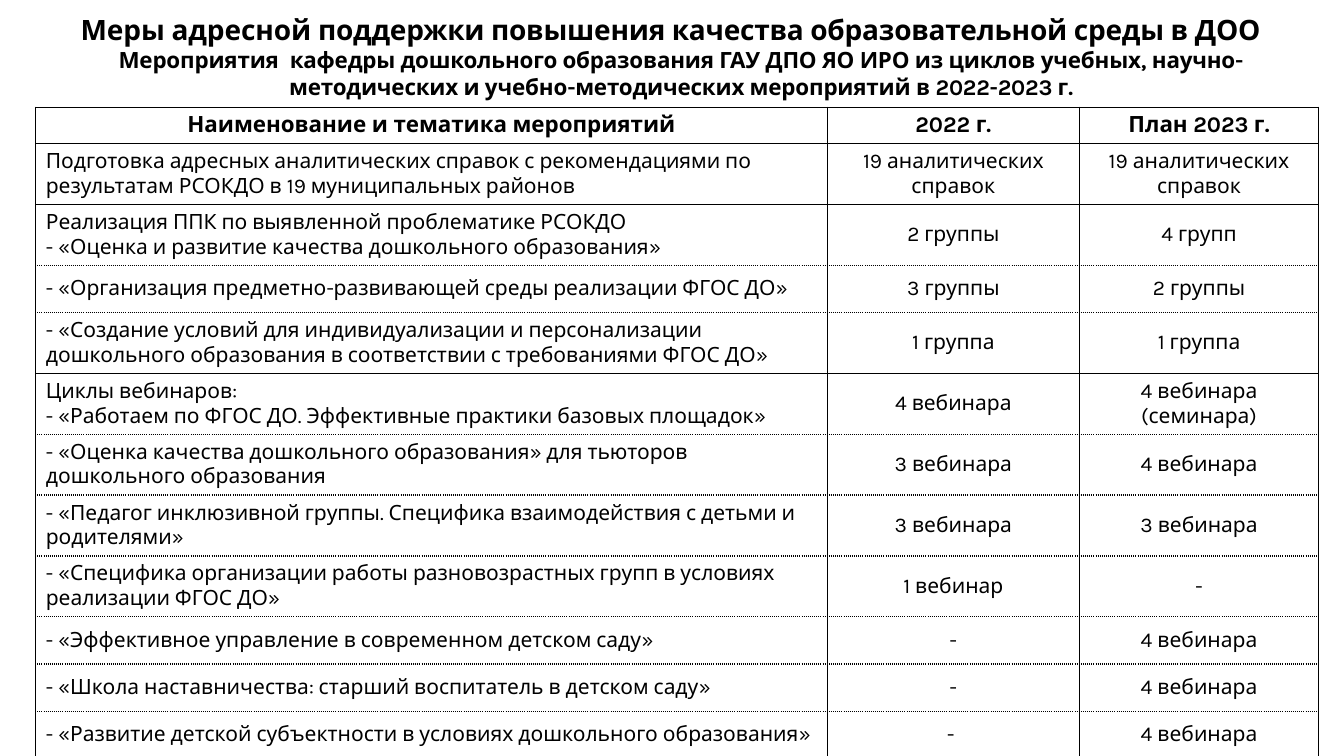
import pptx
import pptx.util
import pptx.dml.color
import pptx.enum.text
import pptx.oxml
from lxml import etree

PX = 9525  # EMU in one px, 96 px to the inch
BLACK = "000000"
FONT = "Karla"
CENTER = pptx.enum.text.PP_ALIGN.CENTER
LEFT = pptx.enum.text.PP_ALIGN.LEFT
A = "http://schemas.openxmlformats.org/drawingml/2006/main"


def rgb(value):
    return pptx.dml.color.RGBColor.from_string(value)


def add_run(p, text, size, bold, spacing=0):
    r = p.add_run()
    r.text = text
    values = {"name": FONT, "size": pptx.util.Pt(size), "bold": bold}
    for name, value in values.items():
        setattr(r.font, name, value)
    r.font.color.rgb = rgb(BLACK)
    if spacing:
        r.font._element.set("spc", str(spacing))


prs = pptx.Presentation()
prs.slide_width, prs.slide_height = 1280 * PX, 720 * PX
s = prs.slides.add_slide(prs.slide_layouts[5])

# Title and subtitle
title = s.shapes.title
subtitle = s.shapes.add_textbox(0, 0, PX, PX)
headings = [
    (title, (8, 0, 1261, 40), 4, 20, 3.1, 30.2,
     [("Меры адресной ", -10),
      ("поддержки повышения качества образовательной среды в ДОО", -20)]),
    (subtitle, (57, 32, 1184, 64), 12, 16, 9.2, None,
     [("Мероприятия  кафедры дошкольного образования ГАУ ДПО ЯО ИРО из циклов "
       "учебных, научно-методических и учебно-методических мероприятий "
       "в 2022-2023 г.", -10)]),
]
for sp, box, top, size, before, line, runs in headings:
    for name, value in zip(("left", "top", "width", "height"), box):
        setattr(sp, name, value * PX)
    tf = sp.text_frame
    frame = {"word_wrap": True, "margin_left": 0, "margin_right": 0,
             "margin_top": top * PX, "margin_bottom": 0,
             "auto_size": pptx.enum.text.MSO_AUTO_SIZE.NONE,
             "vertical_anchor": pptx.enum.text.MSO_ANCHOR.TOP}
    for name, value in frame.items():
        setattr(tf, name, value)
    p = tf.paragraphs[0]
    p.alignment = CENTER
    p.space_before = pptx.util.Pt(before)
    if line:
        p.line_spacing = pptx.util.Pt(line)
    for text, spacing in runs:
        add_run(p, text, size, True, spacing)

# Table contents
rows = [
    ("Наименование и тематика мероприятий", "2022 г.", "План 2023 г."),
    ("Подготовка адресных аналитических справок с рекомендациями по "
     "результатам РСОКДО в 19 муниципальных районов",
     "19 аналитических справок", "19 аналитических справок"),
    ("Реализация ППК по выявленной проблематике РСОКДО\n"
     "- «Оценка и развитие качества дошкольного образования»",
     "2 группы", "4 групп"),
    ("- «Организация предметно-развивающей среды реализации ФГОС ДО»",
     "3 группы", "2 группы"),
    ("- «Создание условий для индивидуализации и персонализации дошкольного "
     "образования в соответствии с требованиями ФГОС ДО»",
     "1 группа", "1 группа"),
    ("Циклы вебинаров:\n"
     "- «Работаем по ФГОС ДО. Эффективные практики базовых площадок»",
     "4 вебинара", "4 вебинара (семинара)"),
    ("- «Оценка качества дошкольного образования» для тьюторов "
     "дошкольного образования", "3 вебинара", "4 вебинара"),
    ("- «Педагог инклюзивной группы. Специфика взаимодействия с детьми "
     "и родителями»", "3 вебинара", "3 вебинара"),
    ("- «Специфика организации работы разновозрастных групп в условиях "
     "реализации ФГОС ДО»", "1 вебинар", "-"),
    ("- «Эффективное управление в современном детском саду»",
     "-", "4 вебинара"),
    ("- «Школа наставничества: старший воспитатель в детском саду»",
     "-", "4 вебинара"),
    ("- «Развитие детской субъектности в условиях дошкольного образования»",
     "- ", "4 вебинара"),
]
col_widths = [754, 240, 228]
HEADER_H, ONE_LINE_H, TWO_LINE_H = 34, 45, 58
one_line_rows = {3, 9, 10, 11}
row_heights = [HEADER_H] + [ONE_LINE_H if i in one_line_rows else TWO_LINE_H
                            for i in range(1, len(rows))]
solid_below = {0, 1, 4, len(rows) - 1}  # other row borders are dotted

# Table
table = s.shapes.add_table(len(rows), len(col_widths), 34 * PX, 102 * PX,
                           sum(col_widths) * PX, sum(row_heights) * PX).table
table.first_row = table.horz_banding = False
for col, width in zip(table.columns, col_widths):
    col.width = width * PX
for i, texts in enumerate(rows):
    table.rows[i].height = row_heights[i] * PX
    for j, text in enumerate(texts):
        cell = table.cell(i, j)
        cell.vertical_anchor = pptx.enum.text.MSO_ANCHOR.MIDDLE
        cell.fill.background()
        tf = cell.text_frame
        for k, line in enumerate(text.split("\n")):
            p = tf.add_paragraph() if k else tf.paragraphs[0]
            p.alignment = CENTER if i == 0 or j else LEFT
            add_run(p, line, 15 if i else 16, i == 0)

        # Cell borders
        solid = {"lnL": True, "lnR": True,
                 "lnT": i == 0 or i - 1 in solid_below,
                 "lnB": i in solid_below}
        for n, (side, is_solid) in enumerate(solid.items()):
            dash = "solid" if is_solid else "sysDot"
            cell._tc.get_or_add_tcPr().insert(n, pptx.oxml.parse_xml(
                f'<a:{side} xmlns:a="{A}" w="12700"><a:solidFill>'
                f'<a:srgbClr val="{BLACK}"/></a:solidFill>'
                f'<a:prstDash val="{dash}"/></a:{side}>'))

prs.save("out.pptx")
